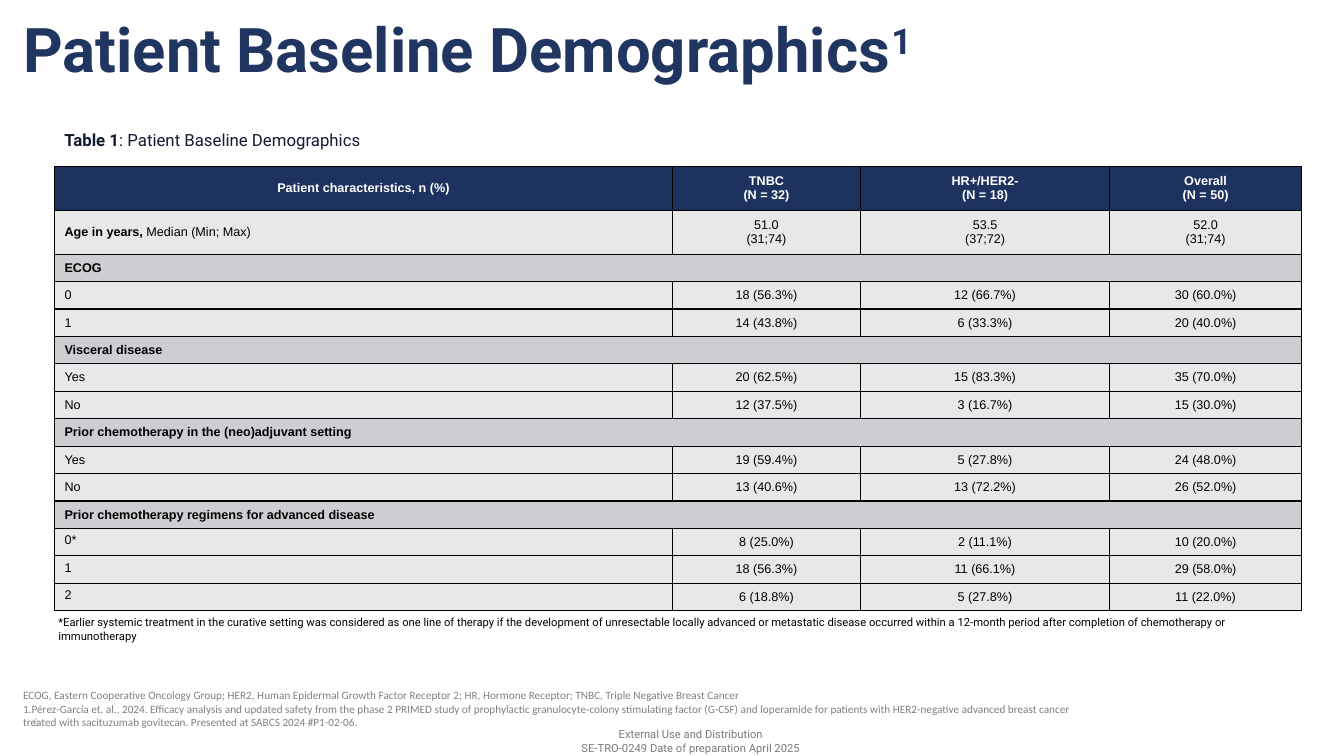
from dataclasses import dataclass

from lxml.etree import SubElement
from pptx import Presentation
from pptx.dml.color import RGBColor
from pptx.enum.text import MSO_ANCHOR as Anchor, PP_ALIGN as Align
from pptx.oxml.ns import qn
from pptx.util import Pt

NAVY = RGBColor(0x20, 0x36, 0x61)
HEAD = RGBColor(0x1E, 0x32, 0x5F)
INK = RGBColor(0x10, 0x1B, 0x30)
BLACK = RGBColor(0, 0, 0)
WHITE = RGBColor(0xFF, 0xFF, 0xFF)
BAND = RGBColor(0xCC, 0xCE, 0xD2)
PALE = RGBColor(0xE7, 0xE8, 0xEA)
GRAY = RGBColor(0x80, 0x80, 0x80)
FOOT = RGBColor(0x78, 0x7A, 0x7E)
FAINT = RGBColor(0xC6, 0xCA, 0xC6)


@dataclass
class Run:
    text: str
    bold: bool = False
    lift: int = 0


@dataclass
class Note:
    box: tuple[float, float, float, float]
    lines: list
    size: float
    color: RGBColor
    font: str = "Roboto"
    align: Align = Align.LEFT
    anchor: Anchor = Anchor.TOP


@dataclass
class Row:
    label: list[Run]
    cells: tuple[str, ...] = ()
    fill: RGBColor = PALE
    high: float = 19.6
    top: bool = False


NOTES = [
    Note((370, 517.7, 247, 23),
         ["External Use and Distribution", "SE-TRO-0249 Date of preparation April 2025"],
         8, FOOT, align=Align.CENTER, anchor=Anchor.MIDDLE),
    Note((16.5, 504, 216, 23), ["6"], 8, FAINT, anchor=Anchor.MIDDLE),
    Note((9.4, 488.2, 772, 36), [
        "ECOG, Eastern Cooperative Oncology Group; HER2, Human Epidermal Growth Factor Receptor 2; "
        "HR, Hormone Receptor; TNBC, Triple Negative Breast Cancer",
        "1.Pérez-García et. al., 2024. Efficacy analysis and updated safety from the phase 2 PRIMED "
        "study of prophylactic granulocyte-colony stimulating factor (G-CSF) and loperamide for "
        "patients with HER2-negative advanced breast cancer treated with sacituzumab govitecan. "
        "Presented at SABCS 2024 #P1-02-06."], 8, GRAY, font="Calibri"),
    Note((38.9, 89.3, 231, 21.6),
         [[Run("Table 1", True), Run(": Patient Baseline Demographics")]], 12, INK),
    Note((34.6, 436.3, 891, 26.6), [
        "*Earlier systemic treatment in the curative setting was considered as one line of therapy "
        "if the development of unresectable locally advanced or metastatic disease occurred within "
        "a 12-month period after completion of chemotherapy or immunotherapy"], 8, BLACK),
]


def band(text: str) -> Row:
    return Row([Run(text, True)], fill=BAND)


def data(label: str, *cells: str, top: bool = False) -> Row:
    return Row([Run(label)], cells, top=top)


WIDTHS = (441.4, 134.4, 177.9, 137.2)
ROWS = [
    Row([Run("Patient characteristics, n (%)", True)],
        ("TNBC\n(N = 32)", "HR+/HER2-\n(N = 18)", "Overall\n(N = 50)"), HEAD, 31.4),
    Row([Run("Age in years, ", True), Run("Median (Min; Max)")],
        ("51.0\n(31;74)", "53.5\n(37;72)", "52.0\n(31;74)"), high=31.4),
    band("ECOG"),
    data("0", "18 (56.3%)", "12 (66.7%)", "30 (60.0%)"),
    data("1", "14 (43.8%)", "6 (33.3%)", "20 (40.0%)"),
    band("Visceral disease"),
    data("Yes", "20 (62.5%)", "15 (83.3%)", "35 (70.0%)"),
    data("No", "12 (37.5%)", "3 (16.7%)", "15 (30.0%)"),
    band("Prior chemotherapy in the (neo)adjuvant setting"),
    data("Yes", "19 (59.4%)", "5 (27.8%)", "24 (48.0%)"),
    data("No", "13 (40.6%)", "13 (72.2%)", "26 (52.0%)"),
    band("Prior chemotherapy regimens for advanced disease"),
    data("0*", "8 (25.0%)", "2 (11.1%)", "10 (20.0%)", top=True),
    data("1", "18 (56.3%)", "11 (66.1%)", "29 (58.0%)", top=True),
    data("2", "6 (18.8%)", "5 (27.8%)", "11 (22.0%)", top=True),
]


def write(frame, lines: list, *, size: float, color: RGBColor, font: str = "Roboto",
          align: Align = Align.LEFT, bold: bool = False, space: float = 1.0) -> None:
    for i, line in enumerate(lines):
        para = frame.paragraphs[0] if i == 0 else frame.add_paragraph()
        para.alignment = align
        para.line_spacing = space
        for part in [Run(line, bold)] if isinstance(line, str) else line:
            run = para.add_run()
            run.text = part.text
            run.font.name = font
            run.font.size = Pt(size)
            run.font.bold = part.bold
            run.font.color.rgb = color
            if part.lift:
                run.font._element.set("baseline", str(part.lift * 1000))


def add_note(slide, note: Note) -> None:
    frame = slide.shapes.add_textbox(*map(Pt, note.box)).text_frame
    frame.word_wrap = True
    frame.vertical_anchor = note.anchor
    write(frame, note.lines, size=note.size, color=note.color, font=note.font, align=note.align)


def add_title(slide) -> None:
    title = slide.shapes.title
    title.left, title.top, title.width, title.height = map(Pt, (9.4, 11.5, 864, 77.8))
    frame = title.text_frame
    frame.word_wrap = True
    frame.vertical_anchor = Anchor.TOP
    frame.margin_top = Pt(6.6)
    write(frame, [[Run("Patient Baseline Demographics", True), Run("1", True, 30)]],
          size=44, color=NAVY, space=0.8)


def add_rules(cell) -> None:
    props = cell._tc.get_or_add_tcPr()
    for side in ("lnL", "lnR", "lnT", "lnB"):
        line = SubElement(props, qn(f"a:{side}"), w=str(Pt(1)))
        fill = SubElement(line, qn("a:solidFill"))
        SubElement(fill, qn("a:srgbClr"), val=str(BLACK))


def add_grid(slide) -> None:
    high = sum(row.high for row in ROWS)
    grid = slide.shapes.add_table(len(ROWS), len(WIDTHS), Pt(38.9), Pt(118.8),
                                  Pt(sum(WIDTHS)), Pt(high)).table
    grid.first_row = grid.horz_banding = False
    for col, width in zip(grid.columns, WIDTHS):
        col.width = Pt(width)
    for r, row in enumerate(ROWS):
        grid.rows[r].height = Pt(row.high)
        head = row.fill == HEAD
        for c in range(len(WIDTHS)):
            cell = grid.cell(r, c)
            add_rules(cell)
            cell.fill.solid()
            cell.fill.fore_color.rgb = row.fill
            cell.vertical_anchor = Anchor.TOP if row.top and c == 0 else Anchor.MIDDLE
            if c and not row.cells:
                continue
            lines = row.cells[c - 1].split("\n") if c else [row.label]
            side = Align.CENTER if c or head else Align.JUSTIFY if row.top else Align.LEFT
            write(cell.text_frame, lines, size=9, color=WHITE if head else BLACK,
                  font="Arial", align=side, bold=head)
        if not row.cells:
            grid.cell(r, 0).merge(grid.cell(r, len(WIDTHS) - 1))


def main() -> None:
    deck = Presentation()
    deck.slide_width, deck.slide_height = Pt(960), Pt(540)
    slide = deck.slides.add_slide(deck.slide_layouts[5])
    add_title(slide)
    add_grid(slide)
    for note in NOTES:
        add_note(slide, note)
    deck.save("out.pptx")


if __name__ == "__main__":
    main()
